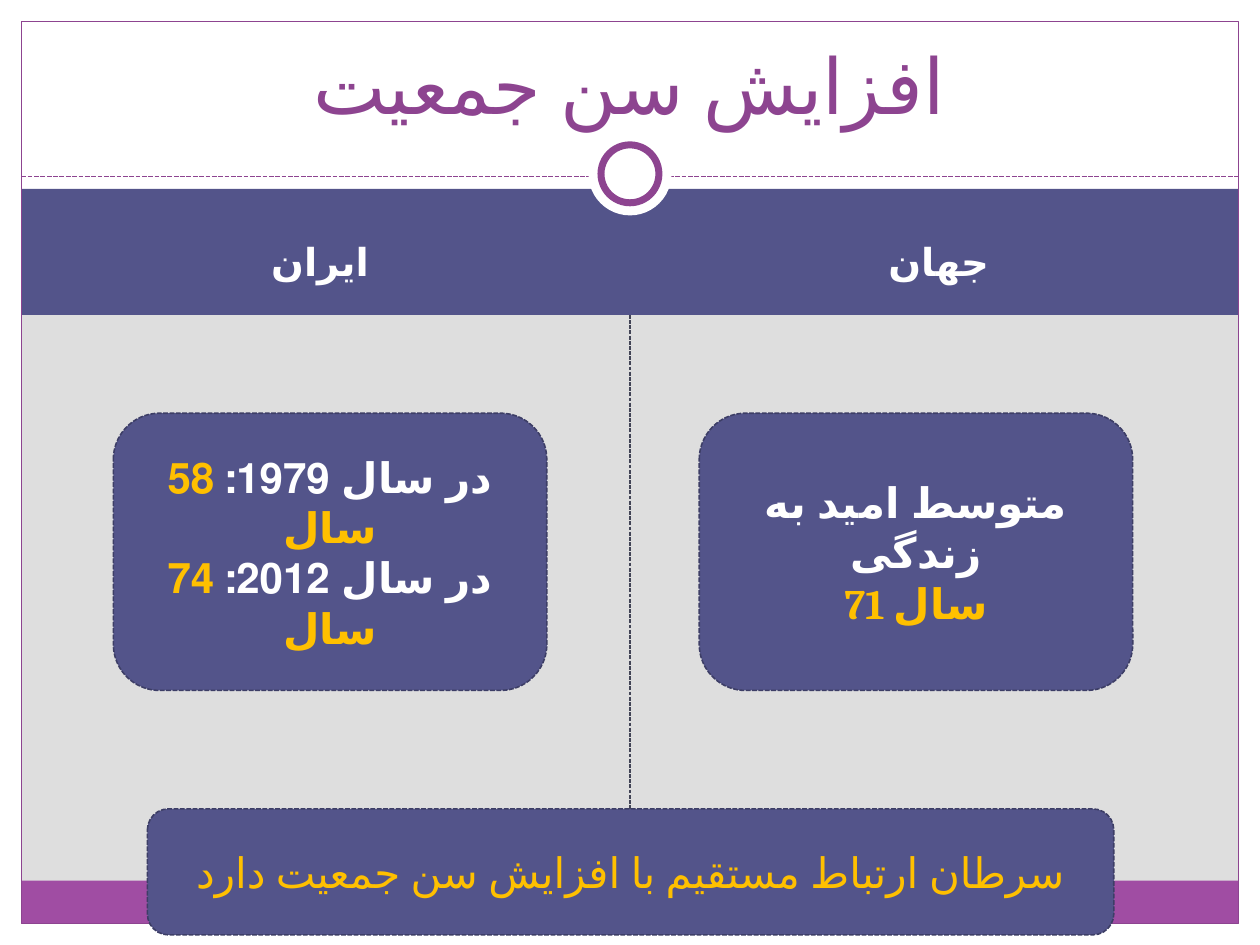
from dataclasses import dataclass

from pptx import Presentation
from pptx.dml.color import RGBColor
from pptx.enum.dml import MSO_LINE
from pptx.enum.lang import MSO_LANGUAGE_ID
from pptx.enum.shapes import MSO_CONNECTOR, MSO_SHAPE
from pptx.enum.text import MSO_ANCHOR, PP_ALIGN
from pptx.oxml.ns import qn
from pptx.util import Pt
from lxml.etree import SubElement

PX = 9144  # 100 px to the inch


@dataclass(frozen=True)
class Theme:
    font: str = "Cambria"
    back: str = "DEDEDE"
    white: str = "FFFFFF"
    main: str = "53548A"
    edge: str = "3D3E66"
    rule: str = "424456"
    band: str = "A04DA3"
    plum: str = "8D4490"
    gold: str = "FFC000"
    title: int = 44
    head: int = 22
    body: int = 24
    thin: float = 0.75
    dash: float = 0.9
    ring: int = 4


T = Theme()


def emu(*nums):
    return [n * PX for n in nums]


def stroke(line, color, width, dashed=False):
    line.color.rgb = RGBColor.from_string(color)
    line.width = Pt(width)
    if dashed:
        line.dash_style = MSO_LINE.SQUARE_DOT


def draw(slide, box, kind=MSO_SHAPE.RECTANGLE, fill=None, line=None,
         width=T.thin, dashed=False):
    shape = slide.shapes.add_shape(kind, *emu(*box))
    shape.shadow.inherit = False
    if fill:
        shape.fill.solid()
        shape.fill.fore_color.rgb = RGBColor.from_string(fill)
    else:
        shape.fill.background()
    if line:
        stroke(shape.line, line, width, dashed)
    else:
        shape.line.fill.background()
    return shape


def link(slide, start, end, color, width):
    line = slide.shapes.add_connector(
        MSO_CONNECTOR.STRAIGHT, *emu(*start, *end))
    stroke(line.line, color, width, True)
    SubElement(line._element.spPr, qn("a:effectLst"))
    return line


def write(shape, paras, size=T.body, color=T.white, bold=False, rtl=False,
          anchor=MSO_ANCHOR.MIDDLE):
    """Each paragraph is a list of runs: a text, or a (text, color) pair."""
    frame = shape.text_frame
    frame.word_wrap = True
    frame.vertical_anchor = anchor
    for i, runs in enumerate(paras):
        para = frame.add_paragraph() if i else frame.paragraphs[0]
        para.alignment = PP_ALIGN.CENTER
        if rtl:
            para._p.get_or_add_pPr().set("rtl", "1")
        for item in runs:
            text, tint = (item, color) if isinstance(item, str) else item
            run = para.add_run()
            run.text = text
            run.font.name = T.font
            run.font.language_id = MSO_LANGUAGE_ID.FARSI
            run.font.size = Pt(size)
            run.font.bold = bold
            run.font.color.rgb = RGBColor.from_string(tint)


def label(slide, box, text, **fmt):
    write(slide.shapes.add_textbox(*emu(*box)), [[text]], **fmt)


def disc(slide, mid, size, **style):
    x, y = mid
    draw(slide, (x - size // 2, y - size // 2, size, size),
         MSO_SHAPE.OVAL, T.white, **style)


def frame(slide, box):
    """White margins, header bar, foot band, rules, border and ring."""
    x, y, w, h = box
    right, low, mid = x + w, y + h, x + w // 2
    wide, tall = right + x, low + y
    for side in ((0, 0, wide, y + 141), (0, low, wide, y),
                 (0, 0, x, tall), (right, 0, x, tall)):
        draw(slide, side, fill=T.white)
    head = draw(slide, (x, y + 133, w, 100), fill=T.main)
    foot = draw(slide, (x, low - 34, w, 34), fill=T.band)
    split = link(slide, (mid, y + 233), (mid, low - 34), T.rule, T.thin)
    split.begin_connect(head, 2)
    split.end_connect(foot, 0)
    link(slide, (x, y + 123), (right, y + 123), T.plum, T.dash)
    draw(slide, box, line=T.plum)
    hub = (mid, y + 121)
    disc(slide, hub, 66)
    disc(slide, hub, 46, line=T.plum, width=T.ring)


def heads(slide, box, names):
    x, y, w, h = box
    wide = 442
    for i, name in enumerate(names):
        label(slide, (x + i * (w - wide), y, wide, h), name,
              size=T.head, bold=True)


def card(slide, box, paras, **fmt):
    shape = draw(slide, box, MSO_SHAPE.ROUNDED_RECTANGLE, T.main,
                 T.edge, T.dash, True)
    write(shape, paras, **fmt)


def main():
    deck = Presentation()
    deck.slide_width, deck.slide_height = emu(1000, 750)
    slide = deck.slides.add_slide(deck.slide_layouts[6])
    slide.background.fill.solid()
    slide.background.fill.fore_color.rgb = RGBColor.from_string(T.back)

    frame(slide, (17, 17, 966, 716))
    label(slide, (33, 25, 933, 83), "افزایش سن جمعیت", size=T.title,
          color=T.plum, anchor=MSO_ANCHOR.BOTTOM)
    heads(slide, (33, 167, 933, 80), ("ایران", "جهان"))
    card(slide, (117, 642, 767, 100),
         [["سرطان ارتباط مستقیم با افزایش سن جمعیت دارد"]],
         color=T.gold, rtl=True)
    card(slide, (555, 328, 344, 220),
         [["متوسط امید به زندگی"], [("71 سال", T.gold)]], bold=True)
    years = (("1979", "58"), ("2012", "74"))
    card(slide, (90, 328, 344, 220),
         [[f"در سال {year}: ", (f"{age} سال", T.gold)]
          for year, age in years], bold=True, rtl=True)
    deck.save("out.pptx")


if __name__ == "__main__":
    main()
